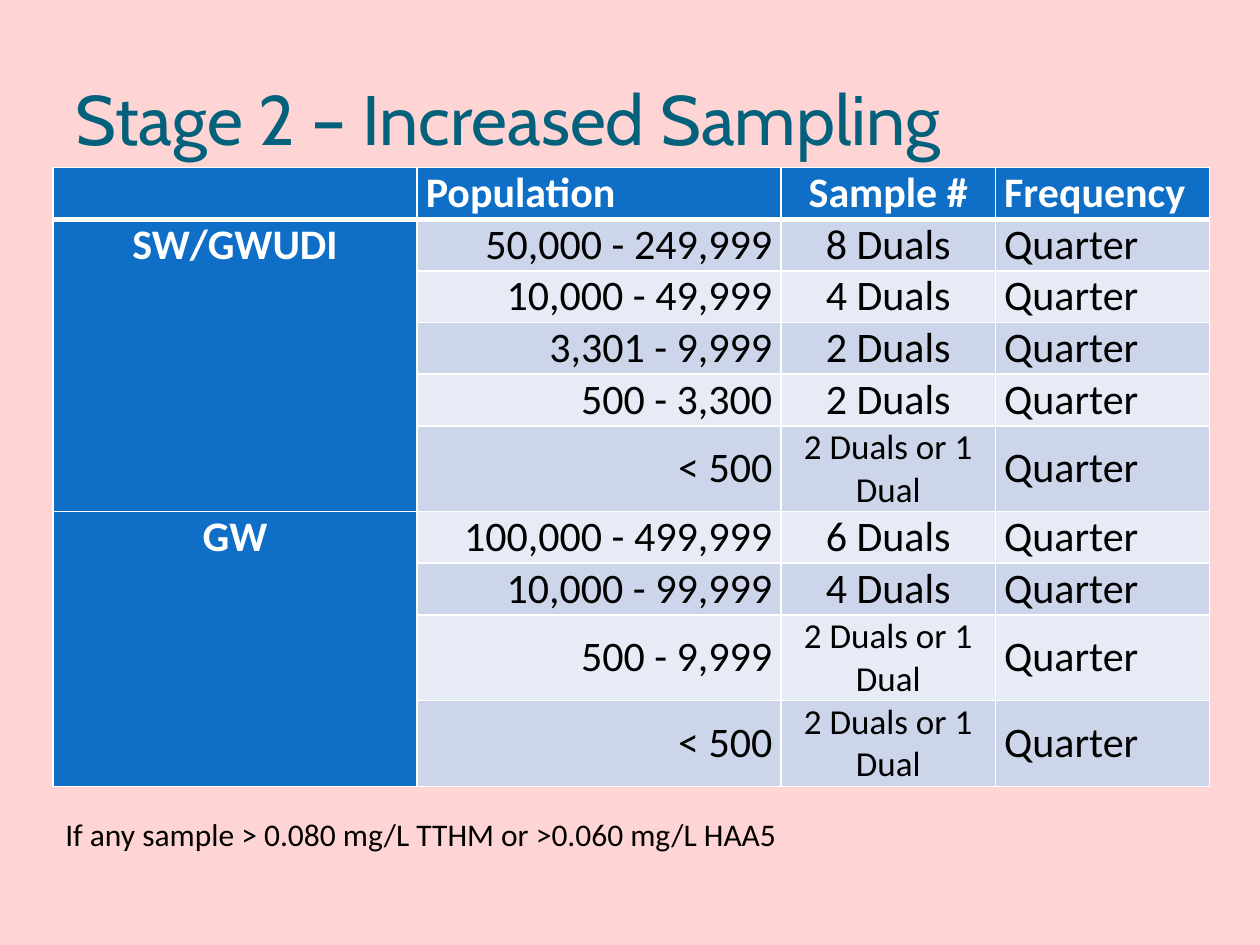
import pptx
import pptx.util
import pptx.dml.color
import pptx.enum.text
import pptx.oxml
import pptx.oxml.ns
from dataclasses import dataclass

Inches = pptx.util.Inches
Align = pptx.enum.text.PP_ALIGN
Anchor = pptx.enum.text.MSO_ANCHOR


@dataclass(frozen=True)
class Theme:
    # Colours
    back: str = "FFD4D4"
    title: str = "04617B"
    head: str = "0F6FC6"
    dark: str = "CCD5EA"
    light: str = "E7EBF5"
    white: str = "FFFFFF"
    black: str = "000000"
    # Fonts and type sizes
    title_font: str = "Cabin"
    font: str = "Calibri"
    title_size: int = 40
    cell_size: int = 24
    small_size: int = 20
    note_size: int = 18


def colour(code):
    return pptx.dml.color.RGBColor.from_string(code)


class Deck:
    def __init__(self, theme):
        self.theme = theme
        self.show = pptx.Presentation()
        self.show.slide_width = Inches(10)
        self.show.slide_height = Inches(7.5)
        self.slide = self.show.slides.add_slide(self.show.slide_layouts[5])
        fill = self.slide.background.fill
        fill.solid()
        fill.fore_color.rgb = colour(theme.back)

    def label(self, frame, text, size, code, font=None, bold=False, align=Align.LEFT):
        frame.text = text
        for para in frame.paragraphs:
            para.alignment = align
            for run in para.runs:
                run.font.name = font or self.theme.font
                run.font.size = pptx.util.Pt(size)
                run.font.bold = bold
                run.font.color.rgb = colour(code)

    def title(self, text, left, top, width, height):
        shape = self.slide.shapes.title
        shape.left, shape.top = Inches(left), Inches(top)
        shape.width, shape.height = Inches(width), Inches(height)
        frame = shape.text_frame
        frame.vertical_anchor = Anchor.BOTTOM
        frame.margin_bottom = Inches(0.1)
        self.label(frame, text, self.theme.title_size, self.theme.title,
                   self.theme.title_font)

    def note(self, text, left, top, width, height):
        box = self.slide.shapes.add_textbox(
            Inches(left), Inches(top), Inches(width), Inches(height))
        box.text_frame.word_wrap = True
        self.label(box.text_frame, text, self.theme.note_size, self.theme.black)

    def grid(self, left, top, widths, heights):
        table = self.slide.shapes.add_table(
            len(heights), len(widths), Inches(left), Inches(top),
            Inches(sum(widths)), Inches(sum(heights))).table
        for col, width in zip(table.columns, widths):
            col.width = Inches(width)
        for row, height in zip(table.rows, heights):
            row.height = Inches(height)
        return table

    def edge(self, cell, side, points):
        line = pptx.oxml.parse_xml(
            f'<a:ln{side} {pptx.oxml.ns.nsdecls("a")} w="{pptx.util.Pt(points)}">'
            f'<a:solidFill><a:srgbClr val="{self.theme.white}"/></a:solidFill>'
            f'</a:ln{side}>')
        cell._tc.get_or_add_tcPr().append(line)

    def cell(self, cell, text, fill, code, bold, align, anchor, size, rims):
        # Borders come before the fill in the cell's XML
        for side, points in rims.items():
            self.edge(cell, side, points)
        cell.fill.solid()
        cell.fill.fore_color.rgb = colour(fill)
        cell.margin_left = cell.margin_right = Inches(0.07)
        cell.margin_top = cell.margin_bottom = 0
        cell.vertical_anchor = anchor
        self.label(cell.text_frame, text, size, code, bold=bold, align=align)


HEADS = ["", "Population", "Sample #", "Frequency"]
SHORT = "2 Duals or 1 Dual"
GROUPS = {
    "SW/GWUDI": [
        ("50,000 - 249,999", "8 Duals"),
        ("10,000 - 49,999", "4 Duals"),
        ("3,301 - 9,999", "2 Duals"),
        ("500 - 3,300", "2 Duals"),
        ("< 500", SHORT),
    ],
    "GW": [
        ("100,000 - 499,999", "6 Duals"),
        ("10,000 - 99,999", "4 Duals"),
        ("500 - 9,999", SHORT),
        ("< 500", SHORT),
    ],
}


def main():
    theme = Theme()
    deck = Deck(theme)
    deck.title("Stage 2 – Increased Sampling", 0.5, 0.42, 9, 0.95)

    # Rows of text: a group's name stands in its first row only
    rows = [HEADS]
    for name, items in GROUPS.items():
        for i, (people, count) in enumerate(items):
            rows.append([name if i == 0 else "", people, count, "Quarter"])

    # Sampling table: rows with a wrapped count are taller
    heights = [0.68 if row[2] == SHORT else 0.41 for row in rows]
    table = deck.grid(0.42, 1.33, [2.89, 2.89, 1.7, 1.7], heights)
    head_align = [Align.LEFT, Align.LEFT, Align.CENTER, Align.LEFT]
    body_align = [Align.CENTER, Align.RIGHT, Align.CENTER, Align.LEFT]
    for r, row in enumerate(rows):
        rims = {"L": 1, "R": 1, "T": 3 if r == 1 else 1, "B": 3 if r == 0 else 1}
        for c, text in enumerate(row):
            strong = r == 0 or c == 0
            if r == 0:
                align, anchor = head_align[c], Anchor.BOTTOM
            else:
                align = body_align[c]
                anchor = Anchor.TOP if c == 0 else Anchor.MIDDLE
            band = theme.dark if r % 2 else theme.light
            deck.cell(
                table.cell(r, c), text,
                fill=theme.head if strong else band,
                code=theme.white if strong else theme.black,
                bold=strong, align=align, anchor=anchor,
                size=theme.small_size if text == SHORT else theme.cell_size,
                rims=rims)

    # Group names span their rows
    first = 1
    for items in GROUPS.values():
        last = first + len(items) - 1
        table.cell(first, 0).merge(table.cell(last, 0))
        first = last + 1

    # Footnote
    deck.note("If any sample > 0.080 mg/L TTHM or >0.060 mg/L HAA5",
              0.42, 6.42, 9, 0.42)
    deck.show.save("out.pptx")


if __name__ == "__main__":
    main()
